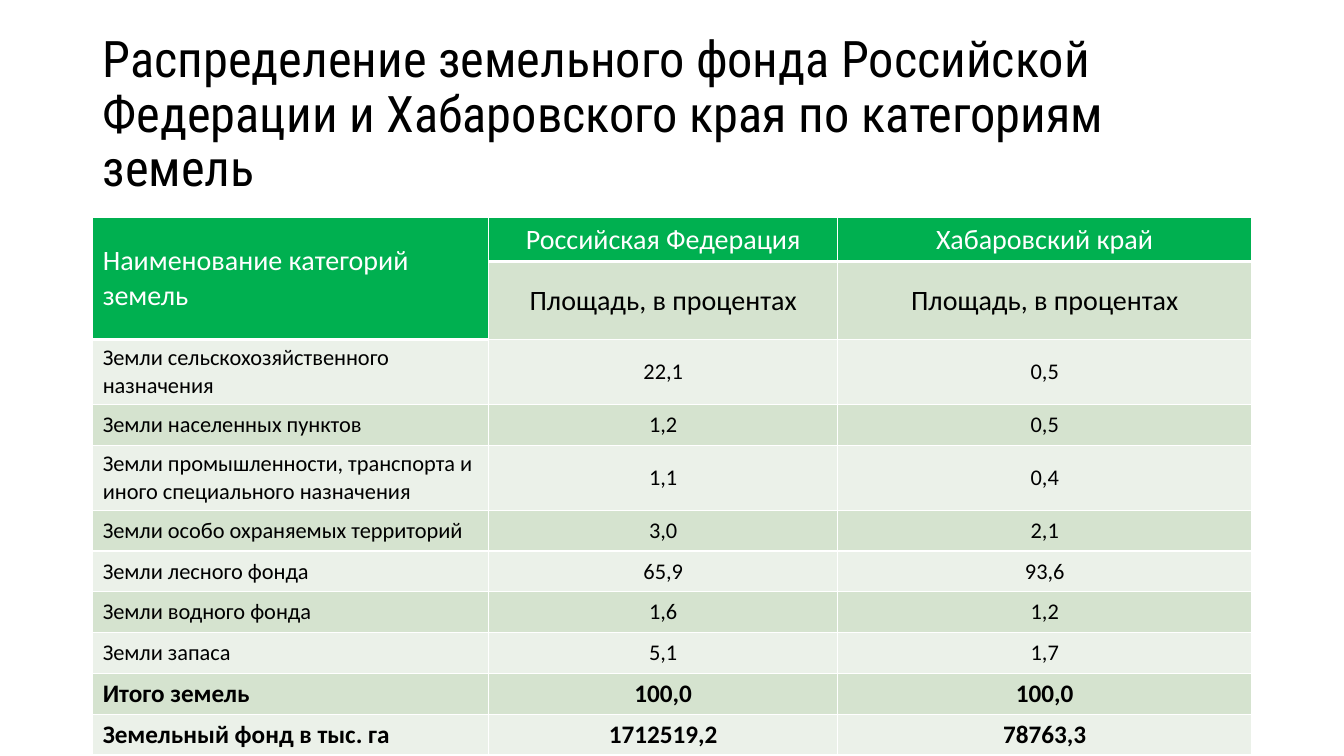
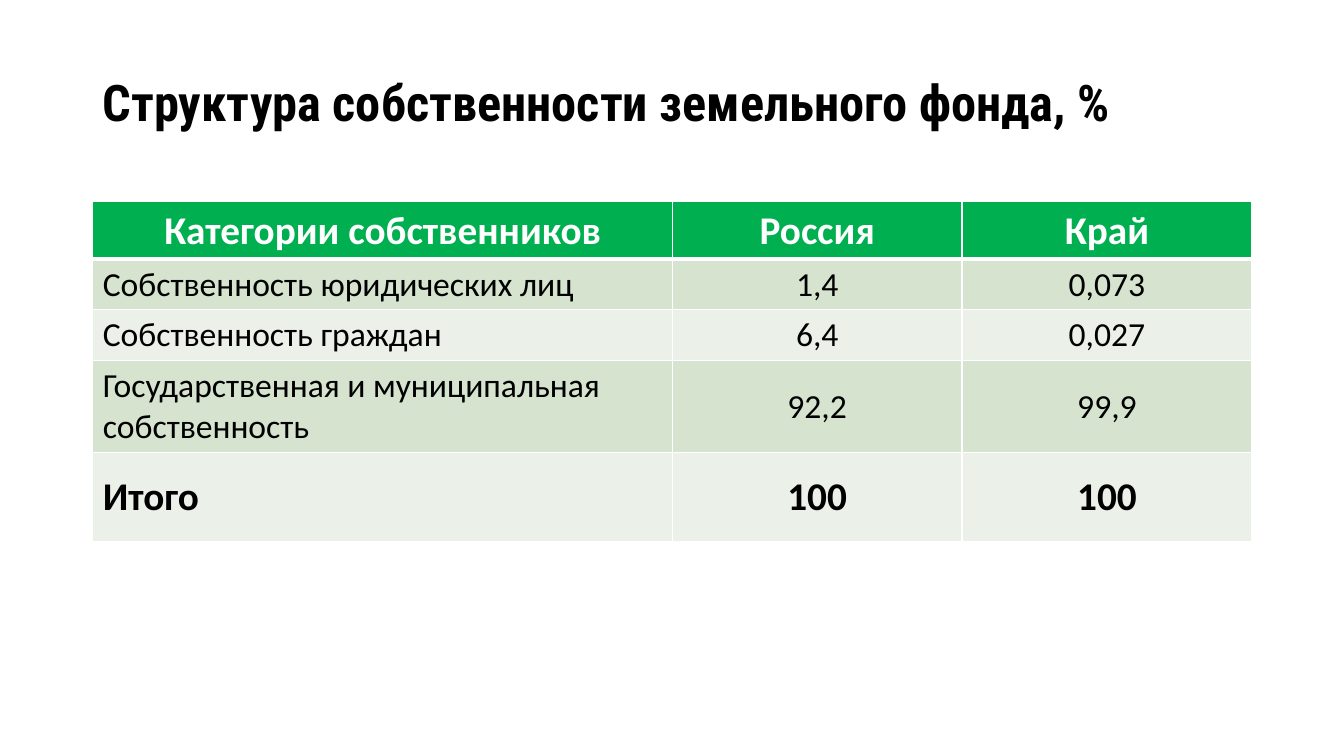
from dataclasses import dataclass

from lxml import etree
from pptx import Presentation
from pptx.dml.color import RGBColor
from pptx.enum.text import MSO_ANCHOR, PP_ALIGN
from pptx.oxml.ns import qn
from pptx.util import Inches, Pt

LEFT, CENTER = PP_ALIGN.LEFT, PP_ALIGN.CENTER
MIDDLE = MSO_ANCHOR.MIDDLE

SLIDE_WIDTH, SLIDE_HEIGHT = Inches(13.33), Inches(7.5)
BLANK_LAYOUT = 6
CONTENT_LEFT, CONTENT_WIDTH = 6.9, 86.25
TITLE_HEIGHT = 19.3

TITLE_FONT, BODY_FONT = "Roboto Condensed", "Calibri"
TITLE_SIZE = 36
BLACK, WHITE = "000000", "FFFFFF"
HEADER_FILL = "00B050"
BAND_FILLS = ("EBF1E9", "D5E3CF")
THIN, THICK = 1, 3


@dataclass(frozen=True)
class Row:
    cells: tuple[str, ...]
    height: float
    size: int
    bold: bool = False


@dataclass(frozen=True)
class TableSlide:
    title: str
    title_top: float
    title_bold: bool
    table_top: float
    column_weights: tuple[float, ...]
    rows: tuple[Row, ...]
    header_span: int = 1
    first_header_align: PP_ALIGN = CENTER


def across(percent: float) -> int:
    return round(SLIDE_WIDTH * percent / 100)


def down(percent: float) -> int:
    return round(SLIDE_HEIGHT * percent / 100)


def color(value: str) -> RGBColor:
    return RGBColor.from_string(value)


def write(text_frame, text: str, *, font: str = BODY_FONT, size: int = 16,
          fill: str = BLACK, bold: bool = False, align: PP_ALIGN = LEFT,
          line_spacing: float = 1.0) -> None:
    text_frame.word_wrap = True
    paragraph = text_frame.paragraphs[0]
    paragraph.alignment = align
    paragraph.line_spacing = line_spacing
    run = paragraph.add_run()
    run.text = text
    run.font.name = font
    run.font.size = Pt(size)
    run.font.bold = bold
    run.font.color.rgb = color(fill)


def set_borders(cell, top: float, bottom: float) -> None:
    properties = cell._tc.get_or_add_tcPr()
    widths = {"lnL": THIN, "lnR": THIN, "lnT": top, "lnB": bottom}
    for index, (side, width) in enumerate(widths.items()):
        line = etree.Element(qn(f"a:{side}"), w=str(Pt(width)))
        solid = etree.SubElement(line, qn("a:solidFill"))
        etree.SubElement(solid, qn("a:srgbClr"), val=WHITE)
        properties.insert(index, line)


def add_title(slide, content: TableSlide) -> None:
    box = slide.shapes.add_textbox(across(CONTENT_LEFT), down(content.title_top),
                                   across(CONTENT_WIDTH), down(TITLE_HEIGHT))
    box.text_frame.vertical_anchor = MIDDLE
    write(box.text_frame, content.title, font=TITLE_FONT, size=TITLE_SIZE,
          bold=content.title_bold, line_spacing=0.9)


def add_table(slide, content: TableSlide) -> None:
    rows, weights = content.rows, content.column_weights
    table = slide.shapes.add_table(
        len(rows), len(weights), across(CONTENT_LEFT), down(content.table_top),
        across(CONTENT_WIDTH), down(sum(row.height for row in rows))).table
    for column, weight in zip(table.columns, weights):
        column.width = across(CONTENT_WIDTH * weight / sum(weights))

    def is_header(row_index: int, column_index: int) -> bool:
        return row_index == 0 or (column_index == 0 and row_index < content.header_span)

    for row_index, row in enumerate(rows):
        table.rows[row_index].height = down(row.height)
        for column_index, text in enumerate(row.cells):
            cell = table.cell(row_index, column_index)
            header = is_header(row_index, column_index)
            below_header = row_index > 0 and is_header(row_index - 1, column_index)
            cell.vertical_anchor = MIDDLE
            cell.fill.solid()
            cell.fill.fore_color.rgb = color(
                HEADER_FILL if header else BAND_FILLS[row_index % 2])
            set_borders(cell, THICK if below_header else THIN, THICK if header else THIN)
            if column_index > 0:
                align = CENTER
            else:
                align = content.first_header_align if header else LEFT
            if text:
                write(cell.text_frame, text, size=row.size, bold=row.bold,
                      fill=WHITE if header else BLACK, align=align)
    if content.header_span > 1:
        table.cell(0, 0).merge(table.cell(content.header_span - 1, 0))


LAND_CATEGORIES = TableSlide(
    title="Распределение земельного фонда Российской Федерации "
          "и Хабаровского края по категориям земель",
    title_top=5.7, title_bold=False, table_top=28.8,
    column_weights=(3.93, 3.46, 4.11),
    header_span=2, first_header_align=LEFT,
    rows=(
        Row(("Наименование категорий земель", "Российская Федерация",
             "Хабаровский край"), 5.8, 20),
        Row(("", "Площадь, в процентах", "Площадь, в процентах"), 10.3, 20),
        Row(("Земли сельскохозяйственного назначения", "22,1", "0,5"), 8.6, 16),
        Row(("Земли населенных пунктов", "1,2", "0,5"), 5.4, 16),
        Row(("Земли промышленности, транспорта и иного специального назначения",
             "1,1", "0,4"), 8.6, 16),
        Row(("Земли особо охраняемых территорий", "3,0", "2,1"), 5.4, 16),
        Row(("Земли лесного фонда", "65,9", "93,6"), 5.4, 16),
        Row(("Земли водного фонда", "1,6", "1,2"), 5.4, 16),
        Row(("Земли запаса", "5,1", "1,7"), 5.4, 16),
        Row(("Итого земель", "100,0", "100,0"), 5.4, 18, True),
        Row(("Земельный фонд в тыс. га", "1712519,2", "78763,3"), 5.4, 18, True),
    ),
)

OWNERSHIP = TableSlide(
    title="Структура собственности земельного фонда, %",
    title_top=4.3, title_bold=True, table_top=26.7,
    column_weights=(2, 1, 1),
    rows=(
        Row(("Категории собственников", "Россия", "Край"), 7.6, 28, True),
        Row(("Собственность юридических лиц", "1,4", "0,073"), 6.7, 24),
        Row(("Собственность граждан", "6,4", "0,027"), 6.7, 24),
        Row(("Государственная и муниципальная собственность", "92,2", "99,9"), 12.2, 24),
        Row(("Итого", "100", "100"), 11.7, 28, True),
    ),
)


def main() -> None:
    presentation = Presentation()
    presentation.slide_width, presentation.slide_height = SLIDE_WIDTH, SLIDE_HEIGHT
    for content in (LAND_CATEGORIES, OWNERSHIP):
        slide = presentation.slides.add_slide(presentation.slide_layouts[BLANK_LAYOUT])
        add_title(slide, content)
        add_table(slide, content)
    presentation.save("out.pptx")


if __name__ == "__main__":
    main()
